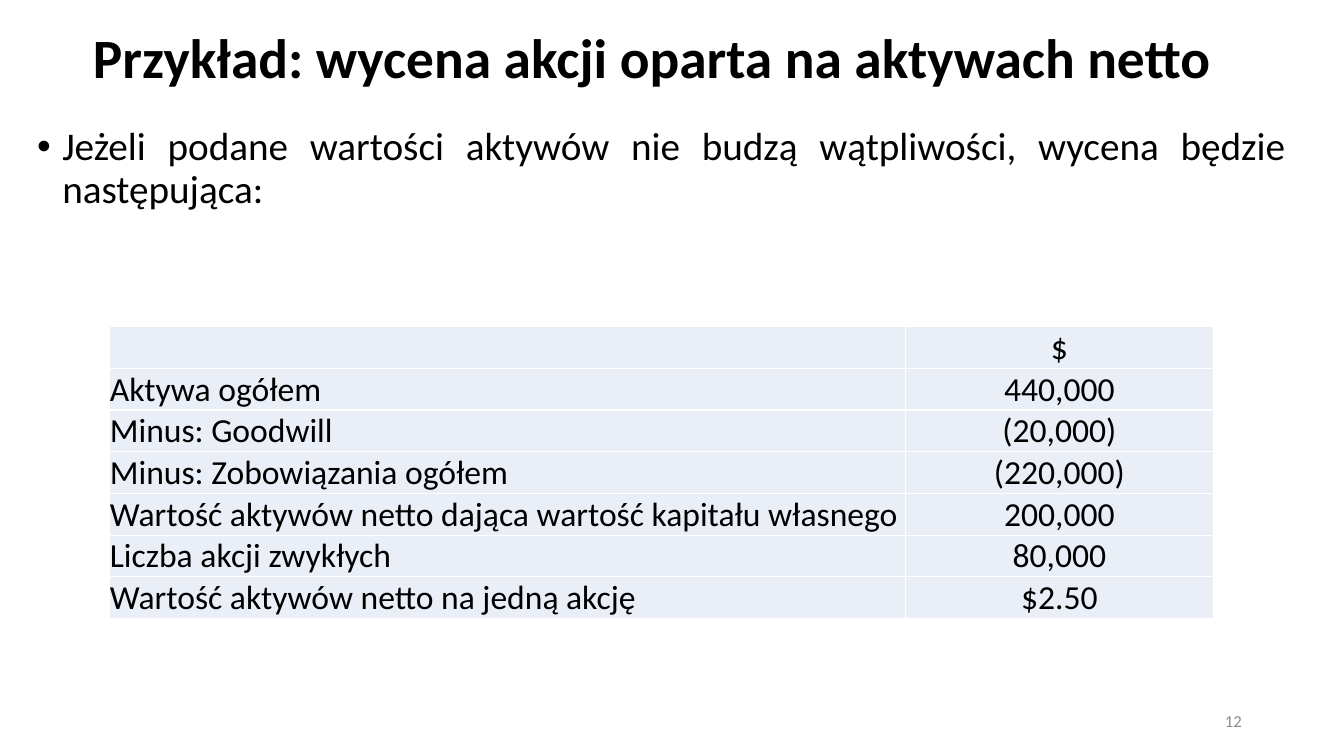
from lxml import etree
from pptx import Presentation
from pptx import util as u
from pptx.dml.color import RGBColor
from pptx.enum import text
from pptx.oxml import ns

FONT = "Calibri"
BLACK = RGBColor(0x00, 0x00, 0x00)
GREY = RGBColor(0x8C, 0x8C, 0x8C)
PALE_BLUE = RGBColor(0xEA, 0xEF, 0xF7)
WHITE = RGBColor(0xFF, 0xFF, 0xFF)
LEFT, CENTER = text.PP_ALIGN.LEFT, text.PP_ALIGN.CENTER
MIDDLE = text.MSO_ANCHOR.MIDDLE

VALUATION = [
    ("", "$"),
    ("Aktywa ogółem", "440,000"),
    ("Minus: Goodwill", "(20,000)"),
    ("Minus: Zobowiązania ogółem", "(220,000)"),
    ("Wartość aktywów netto dająca wartość kapitału własnego", "200,000"),
    ("Liczba akcji zwykłych", "80,000"),
    ("Wartość aktywów netto na jedną akcję", "$2.50"),
]
COLUMN_WIDTHS = (568.8, 220.3)
ROW_HEIGHT = 29.8


def add_run(p, content, size, color=BLACK, bold=False):
    """Add one formatted run to a paragraph."""
    r = p.add_run()
    r.text = content
    r.font.name = FONT
    r.font.size = u.Pt(size)
    r.font.bold = bold
    r.font.color.rgb = color


def set_title(s, content):
    """Place and fill the title placeholder."""
    sp = s.shapes.title
    sp.left, sp.top, sp.width, sp.height = (u.Pt(v) for v in (19.4, 23.8, 892.8, 38.2))
    tf = sp.text_frame
    tf.word_wrap = True
    tf.auto_size = text.MSO_AUTO_SIZE.NONE
    tf.vertical_anchor = MIDDLE
    p = tf.paragraphs[0]
    p.alignment = CENTER
    p.line_spacing = 0.9
    add_run(p, content, 39.6, bold=True)


def add_textbox(s, x, y, w, h, content, size, color, align, anchor):
    """Add a wrapped text box and return its paragraph."""
    sp = s.shapes.add_textbox(u.Pt(x), u.Pt(y), u.Pt(w), u.Pt(h))
    tf = sp.text_frame
    tf.word_wrap = True
    tf.vertical_anchor = anchor
    p = tf.paragraphs[0]
    p.alignment = align
    add_run(p, content, size, color)
    return p


def set_bullet(p, indent):
    """Give a paragraph a hanging round bullet."""
    pPr = p._p.get_or_add_pPr()
    pPr.set("marL", str(u.Pt(indent)))
    pPr.set("indent", str(u.Pt(-indent)))
    etree.SubElement(pPr, ns.qn("a:buFont"), typeface="Arial")
    etree.SubElement(pPr, ns.qn("a:buChar"), char="•")


def set_borders(cell, color, width):
    """Draw all four borders of a cell."""
    tcPr = cell._tc.get_or_add_tcPr()
    for side in ("lnL", "lnR", "lnT", "lnB"):
        ln = etree.SubElement(tcPr, ns.qn(f"a:{side}"), w=str(u.Pt(width)))
        fill = etree.SubElement(ln, ns.qn("a:solidFill"))
        etree.SubElement(fill, ns.qn("a:srgbClr"), val=str(color))


def fill_cell(cell, content, align):
    """Format one table cell and write its text."""
    set_borders(cell, WHITE, 1)
    cell.fill.solid()
    cell.fill.fore_color.rgb = PALE_BLUE
    cell.margin_left = cell.margin_right = cell.margin_top = u.Pt(0.7)
    cell.margin_bottom = u.Pt(0)
    cell.vertical_anchor = text.MSO_ANCHOR.BOTTOM
    p = cell.text_frame.paragraphs[0]
    p.alignment = align
    if content:
        add_run(p, content, 24)


def add_valuation_table(s, x, y):
    """Add the net asset valuation table."""
    frame = s.shapes.add_table(
        len(VALUATION), len(COLUMN_WIDTHS), u.Pt(x), u.Pt(y),
        u.Pt(sum(COLUMN_WIDTHS)), u.Pt(ROW_HEIGHT * len(VALUATION)))
    table = frame.table
    table.first_row = table.horz_banding = False
    for column, width in zip(table.columns, COLUMN_WIDTHS):
        column.width = u.Pt(width)
    for row, values in zip(table.rows, VALUATION):
        row.height = u.Pt(ROW_HEIGHT)
        for cell, content, align in zip(row.cells, values, (LEFT, CENTER)):
            fill_cell(cell, content, align)


def main():
    """Build and save the slide."""
    prs = Presentation()
    prs.slide_width, prs.slide_height = u.Pt(960), u.Pt(540)
    s = prs.slides.add_slide(prs.slide_layouts[5])
    set_title(s, "Przykład: wycena akcji oparta na aktywach netto")
    p = add_textbox(
        s, 19.4, 87.1, 905.8, 428.4,
        "Jeżeli podane wartości aktywów nie budzą wątpliwości, wycena będzie następująca:",
        28, BLACK, text.PP_ALIGN.JUSTIFY, text.MSO_ANCHOR.TOP)
    p.line_spacing = 0.9
    p.space_before = u.Pt(10)
    set_bullet(p, 18)
    add_textbox(s, 678.2, 500.4, 216, 28.8, "12", 12, GREY, text.PP_ALIGN.RIGHT, MIDDLE)
    add_valuation_table(s, 77.8, 233.3)
    prs.save("out.pptx")


if __name__ == "__main__":
    main()
